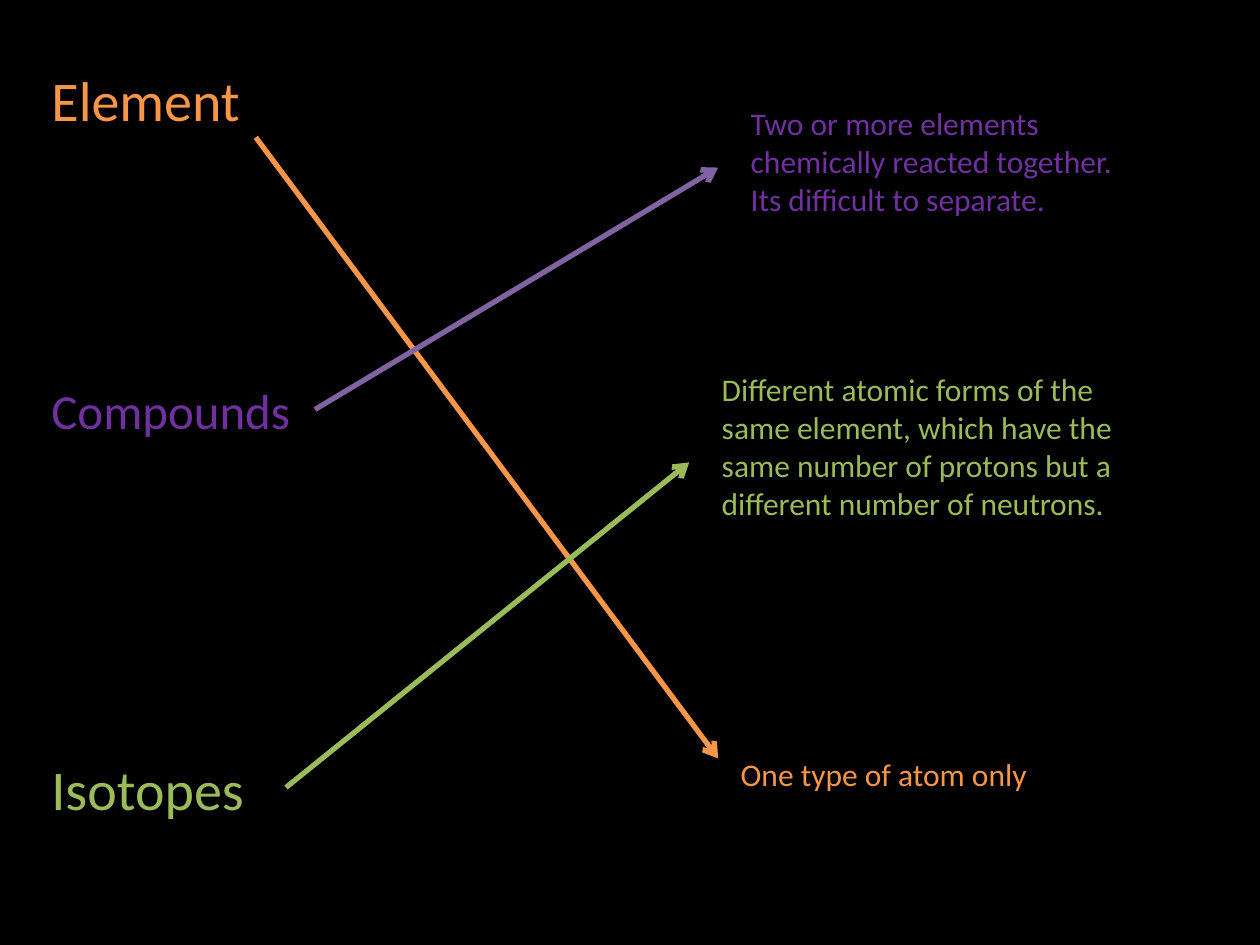
from pptx import Presentation
from pptx.dml.color import RGBColor
from pptx.enum import shapes, text
from pptx.oxml.ns import qn
from pptx.util import Inches, Pt
from lxml import etree

ORANGE, PURPLE, GREEN, VIOLET = "F79646", "7030A0", "9BBB59", "8064A2"

TERMS = [
    ("Element", 32, ORANGE, (0.31, 0.47, 2.19, 0.64)),
    ("Compounds", 28, PURPLE, (0.31, 2.97, 2.19, 0.57)),
    ("Isotopes", 32, GREEN, (0.31, 5.94, 2.11, 0.64)),
]
DEFINITIONS = [
    ("Two or more elements chemically reacted together. Its difficult to separate.",
     18, PURPLE, (5.86, 0.78, 3.13, 1.01)),
    ("One type of atom only", 18, ORANGE, (5.78, 5.94, 3.59, 0.4)),
    ("Different atomic forms of the same element, which have the same number "
     "of protons but a different number of neutrons.",
     18, GREEN, (5.63, 2.89, 3.36, 1.31)),
]
MATCHES = [
    (ORANGE, (2.03, 1.09), (5.7, 6.02)),
    (VIOLET, (2.5, 3.25), (5.7, 1.33)),
    (GREEN, (2.27, 6.25), (5.47, 3.67)),
]


def paint(color, hex_value):
    color.rgb = RGBColor.from_string(hex_value)


def add_label(slide, wording, size, color, box):
    label = slide.shapes.add_textbox(*map(Inches, box))
    frame = label.text_frame
    frame.word_wrap = True
    frame.auto_size = text.MSO_AUTO_SIZE.SHAPE_TO_FIT_TEXT
    paragraph = frame.paragraphs[0]
    paragraph.text = wording
    paragraph.font.name = "Calibri"
    paragraph.font.size = Pt(size)
    paint(paragraph.font.color, color)


def add_arrow(slide, color, start, end):
    arrow = slide.shapes.add_connector(
        shapes.MSO_CONNECTOR.STRAIGHT, *map(Inches, start + end))
    arrow.line.width = Pt(3)
    paint(arrow.line.color, color)
    properties = arrow._element.spPr
    etree.SubElement(properties.find(qn("a:ln")), qn("a:tailEnd"), type="arrow")
    etree.SubElement(properties, qn("a:effectLst"))


def main():
    deck = Presentation()
    deck.slide_width, deck.slide_height = Inches(10), Inches(7.5)
    slide = deck.slides.add_slide(deck.slide_layouts[6])
    slide.background.fill.solid()
    paint(slide.background.fill.fore_color, "000000")
    for label in TERMS + DEFINITIONS:
        add_label(slide, *label)
    for match in MATCHES:
        add_arrow(slide, *match)
    deck.save("out.pptx")


if __name__ == "__main__":
    main()
